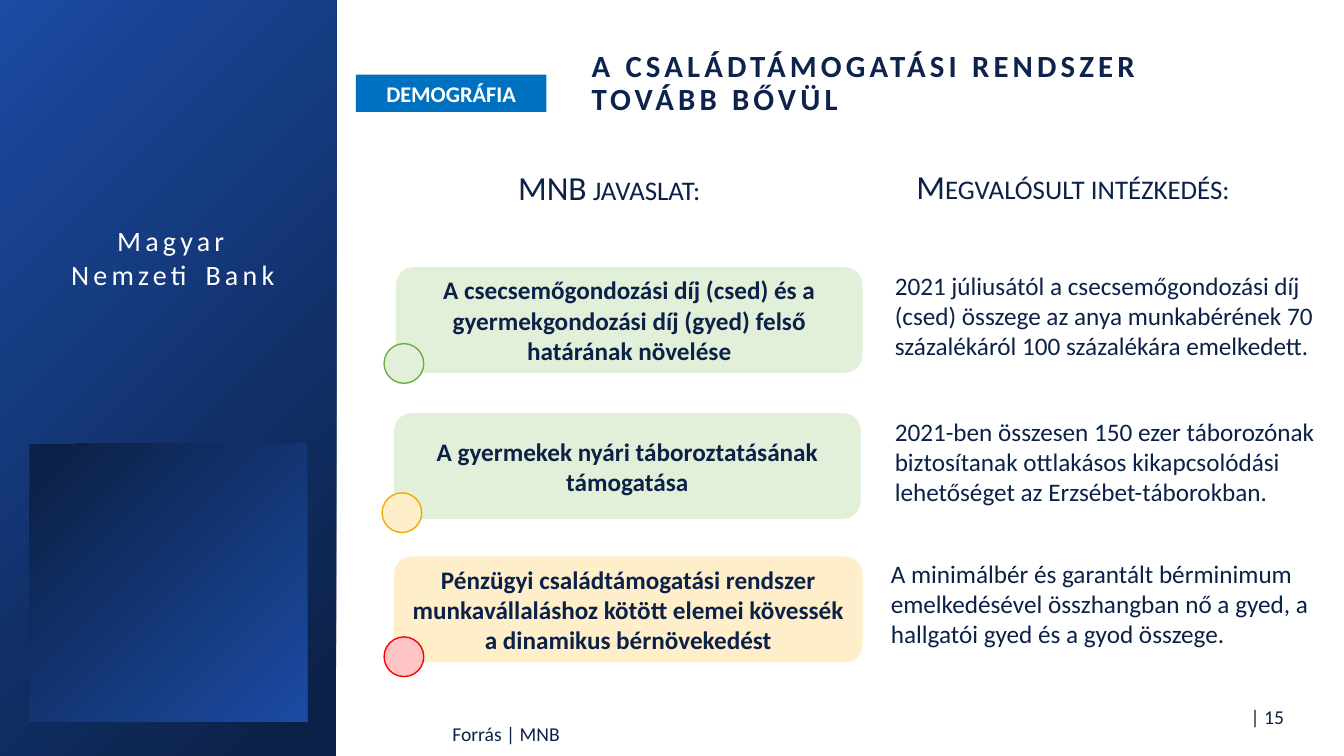
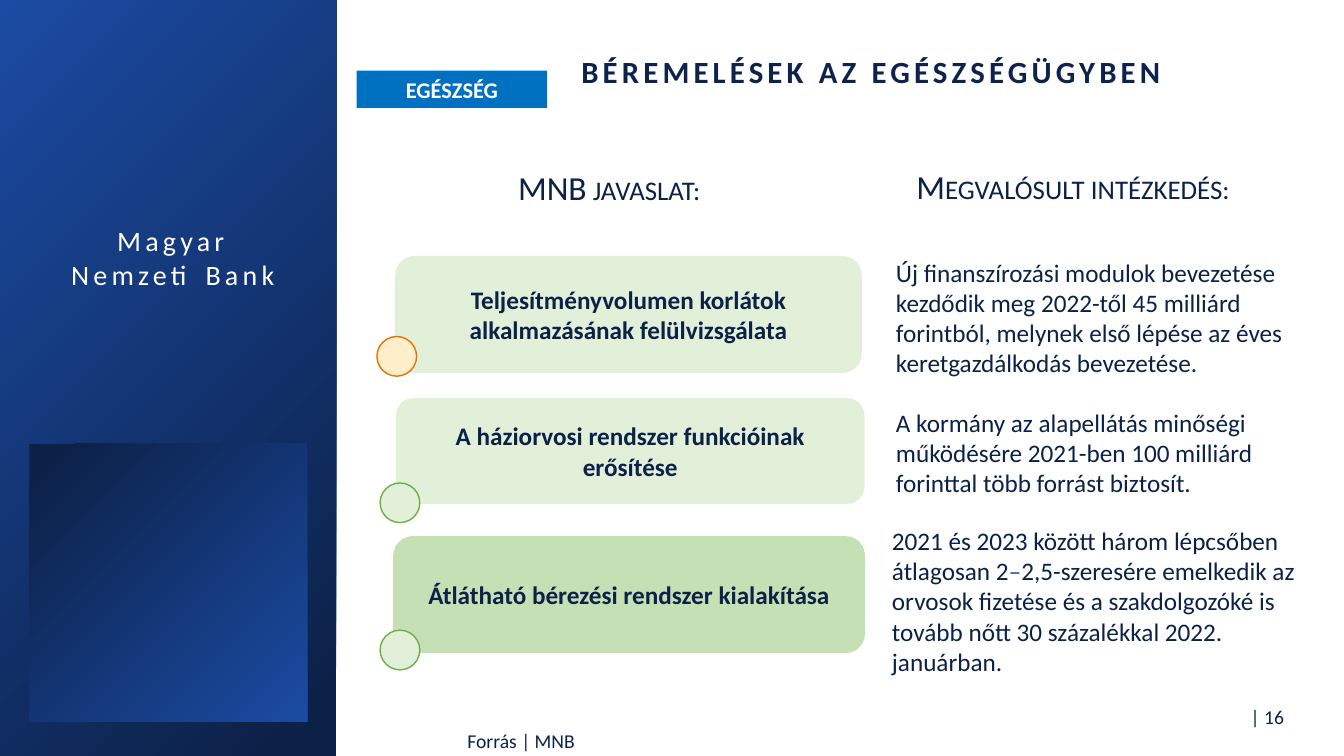
from pptx import Presentation
from pptx import util as u
from pptx.dml.color import RGBColor
from pptx.enum import shapes, text

# Shared look
FONT = "Calibri"
COLOURS = {
    "navy": "0C2148", "title": "0D234D", "royal": "1B4BA3", "dash": "1B4AA3",
    "white": "FFFFFF", "tag": "0070C0",
    "pale_green": "E2F0D9", "mid_green": "C5E0B4", "green": "70AD47",
    "pale_amber": "FFEECA", "amber": "F6A800", "orange": "E57200",
    "pale_red": "FFC5C5", "red": "FF0000",
}
DOT_SIZE = 1
NOTE_WIDTH = 11.2
NOTE_LINE, NOTE_MARGINS = 0.77, 0.25
LEFT, CENTRE, RIGHT = text.PP_ALIGN.LEFT, text.PP_ALIGN.CENTER, text.PP_ALIGN.RIGHT
TOP, MIDDLE = text.MSO_ANCHOR.TOP, text.MSO_ANCHOR.MIDDLE
SHAPE = shapes.MSO_SHAPE

# Content, lengths in centimetres
BANK = "Magyar Nemzeti Bank"
SOURCE = "Forrás | MNB"
HEADINGS = [
    ("MNB javaslat:", (11.86, 4.09, 6.99, 1.24)),
    ("Megvalósult intézkedés:", (22.45, 4.06, 9.19, 1.24)),
]
SLIDES = [
    {
        "number": 15,
        "title": ("A CSALÁDTÁMOGATÁSI RENDSZER TOVÁBB BŐVÜL", (14.71, 1.12, 17.58, 1.98)),
        "tag": ("DEMOGRÁFIA", (8.97, 1.88, 4.8, 0.94)),
        "source": (11.15, 18.03, 10, 1),
        "rows": [
            {"proposal": "A csecsemőgondozási díj (csed) és a gyermekgondozási díj (gyed) "
                         "felső határának növelése",
             "box": (9.98, 6.73, 11.76, 2.67), "fill": "pale_green",
             "dot": (9.68, 8.66), "dot_colours": ("pale_green", "green"),
             "measure": ["2021 júliusától a csecsemőgondozási díj (csed) összege az anya "
                         "munkabérének 70 százalékáról 100 százalékára emelkedett."],
             "note": (22.3, 6.68), "lines": 3},
            {"proposal": "A gyermekek nyári táboroztatásának támogatása",
             "box": (9.93, 10.41, 11.76, 2.67), "fill": "pale_green",
             "dot": (9.63, 12.42), "dot_colours": ("pale_amber", "amber"),
             "measure": ["2021-ben összesen 150 ezer táborozónak biztosítanak ottlakásos "
                         "kikapcsolódási lehetőséget az Erzsébet-táborokban."],
             "note": (22.3, 10.36), "lines": 3},
            {"proposal": "Pénzügyi családtámogatási rendszer munkavállaláshoz kötött elemei "
                         "kövessék a dinamikus bérnövekedést",
             "box": (9.93, 14.02, 11.81, 2.67), "fill": "pale_amber",
             "dot": (9.68, 16.05), "dot_colours": ("pale_red", "red"),
             "measure": ["A minimálbér és garantált bérminimum emelkedésével összhangban "
                         "nő a gyed, a hallgatói gyed és a gyod összege."],
             "note": (22.2, 13.94), "lines": 3},
        ],
    },
    {
        "number": 16,
        "title": ("BÉREMELÉSEK AZ EGÉSZSÉGÜGYBEN", (14.45, 0.86, 18.42, 1.98)),
        "tag": ("EGÉSZSÉG", (8.99, 1.78, 4.8, 0.94)),
        "source": (11.53, 18.19, 10, 1),
        "rows": [
            {"proposal": "Teljesítményvolumen korlátok alkalmazásának felülvizsgálata",
             "box": (9.96, 6.45, 11.76, 2.95), "fill": "pale_green",
             "dot": (9.5, 8.48), "dot_colours": ("pale_amber", "orange"),
             "measure": ["Új finanszírozási modulok bevezetése kezdődik meg 2022-től "
                         "45 milliárd forintból, melynek első lépése az éves "
                         "keretgazdálkodás bevezetése."],
             "note": (22.33, 6.35), "lines": 4},
            {"proposal": "A háziorvosi rendszer funkcióinak erősítése",
             "box": (9.98, 10.03, 11.81, 2.67), "fill": "pale_green",
             "dot": (9.58, 12.17), "dot_colours": ("pale_green", "green"),
             "measure": ["A kormány az alapellátás minőségi működésére 2021-ben "
                         "100 milliárd forinttal több forrást biztosít."],
             "note": (22.33, 10.13), "lines": 3},
            {"proposal": "Átlátható bérezési rendszer kialakítása",
             "box": (9.91, 13.51, 11.89, 2.95), "fill": "mid_green",
             "dot": (9.58, 15.88), "dot_colours": ("pale_green", "green"),
             "measure": ["2021 és 2023 között három lépcsőben átlagosan 2",
                         ("–", {"colour": "dash", "italic": True}),
                         "2,5-szeresére emelkedik az orvosok fizetése és a szakdolgozóké "
                         "is tovább nőtt 30 százalékkal 2022. januárban."],
             "note": (22.23, 13.11), "lines": 5},
        ],
    },
]


def colour(name):
    return RGBColor.from_string(COLOURS[name])


def place(box):
    return [u.Cm(length) for length in box]


def write(shape, runs, size, align=LEFT, anchor=TOP, spacing=None, margins=None, **style):
    """Fill a shape with one paragraph; a run is a string or (string, style)."""
    frame = shape.text_frame
    frame.word_wrap = True
    frame.vertical_anchor = anchor
    if margins:
        frame.margin_left = frame.margin_right = u.Cm(margins[0])
        frame.margin_top = frame.margin_bottom = u.Cm(margins[1])
    paragraph = frame.paragraphs[0]
    paragraph.alignment = align
    if spacing:
        paragraph.line_spacing = spacing
    for item in runs:
        words, extra = (item, {}) if isinstance(item, str) else item
        look = {**style, **extra}
        run = paragraph.add_run()
        run.text = words
        run.font.name = FONT
        run.font.size = u.Pt(size)
        run.font.bold = look.get("bold", False)
        run.font.italic = look.get("italic", False)
        run.font.color.rgb = colour(look.get("colour", "navy"))
        properties = run.font._element
        if look.get("tracking"):
            properties.set("spc", str(look["tracking"] * 100))
        if look.get("small_caps"):
            properties.set("cap", "small")


def add_text(slide, box, runs, size, **style):
    write(slide.shapes.add_textbox(*place(box)), runs, size, **style)


def add_block(slide, kind, box, fill=None, line=None):
    shape = slide.shapes.add_shape(kind, *place(box))
    shape.shadow.inherit = False
    if fill:
        shape.fill.solid()
        shape.fill.fore_color.rgb = colour(fill)
    if line:
        shape.line.color.rgb = colour(line)
        shape.line.width = u.Pt(1)
    else:
        shape.line.fill.background()
    return shape


def add_gradient(slide, box, rotation=0):
    shape = add_block(slide, SHAPE.RECTANGLE, box)
    shape.rotation = rotation
    shape.fill.gradient()
    shape.fill.gradient_angle = 135
    for stop, (position, name) in zip(shape.fill.gradient_stops, [(0.06, "navy"), (1, "royal")]):
        stop.position = position
        stop.color.rgb = colour(name)


def add_frame(slide, content):
    """Side panel, title, tag, headings and footer."""
    add_gradient(slide, (0, 0, 8.47, 19.05))
    add_gradient(slide, (0.74, 11.18, 7, 7), rotation=180)
    add_text(slide, (1.14, 5.51, 6.43, 1.96), [BANK], 20,
             align=CENTRE, colour="white", tracking=3)
    add_text(slide, (30.86, 17.53, 1.75, 1.04), [f"| {content['number']}"], 14,
             align=RIGHT, anchor=MIDDLE)
    title, box = content["title"]
    add_text(slide, box, [title], 22, anchor=MIDDLE, spacing=0.9, margins=(0.2, 0.1),
             colour="title", bold=True, tracking=3)
    label, box = content["tag"]
    write(add_block(slide, SHAPE.RECTANGLE, box, "tag"), [label], 16,
          align=CENTRE, anchor=MIDDLE, colour="white", bold=True)
    for heading, box in HEADINGS:
        add_text(slide, box, [heading], 24, align=CENTRE, anchor=MIDDLE, small_caps=True)
    add_text(slide, content["source"], [SOURCE], 14, anchor=MIDDLE, spacing=0.9)


def add_row(slide, row):
    """Proposal box with its status dot, and the measure beside it."""
    proposal = add_block(slide, SHAPE.ROUNDED_RECTANGLE, row["box"], row["fill"])
    write(proposal, [row["proposal"]], 18, align=CENTRE, anchor=MIDDLE, bold=True)
    add_block(slide, SHAPE.OVAL, (*row["dot"], DOT_SIZE, DOT_SIZE), *row["dot_colours"])
    height = NOTE_MARGINS + NOTE_LINE * row["lines"]
    add_text(slide, (*row["note"], NOTE_WIDTH, height), row["measure"], 18)


def main():
    presentation = Presentation()
    presentation.slide_width, presentation.slide_height = u.Cm(33.87), u.Cm(19.05)
    for content in SLIDES:
        slide = presentation.slides.add_slide(presentation.slide_layouts[6])
        add_frame(slide, content)
        for row in content["rows"]:
            add_row(slide, row)
    presentation.save("out.pptx")


if __name__ == "__main__":
    main()
